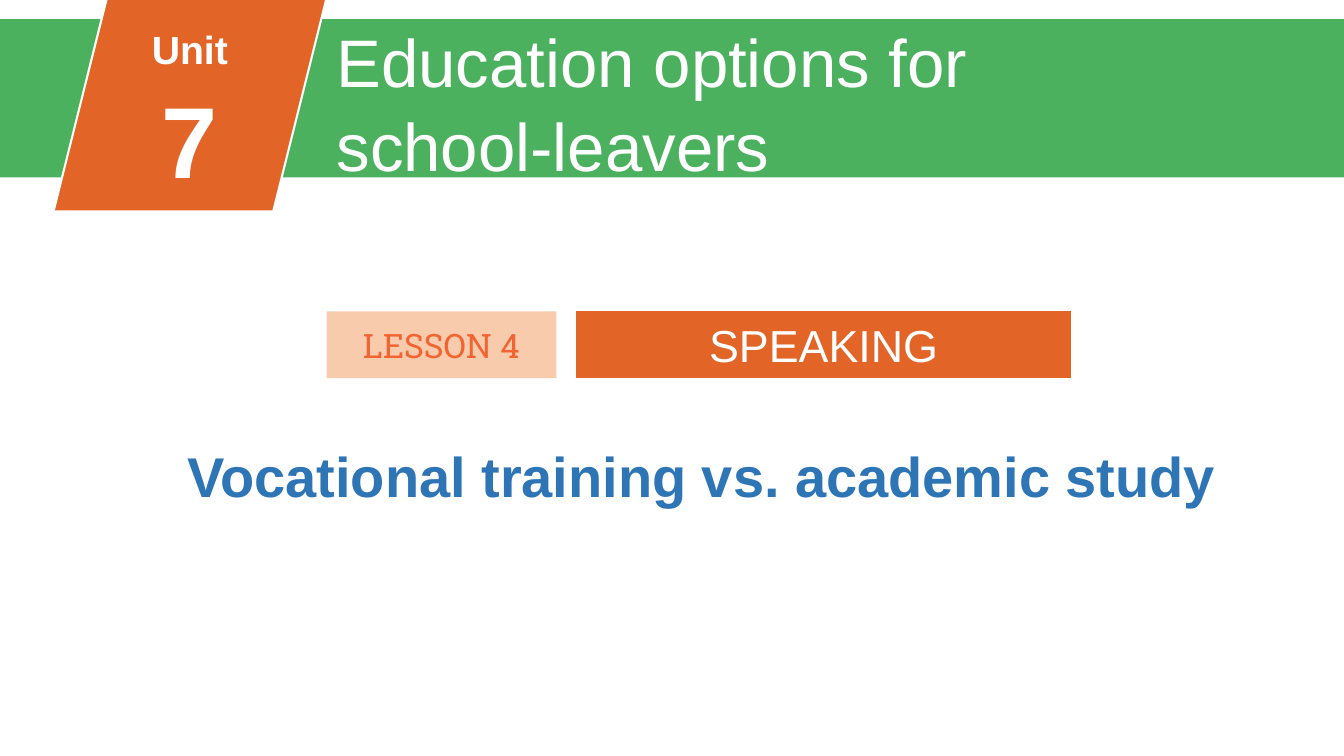
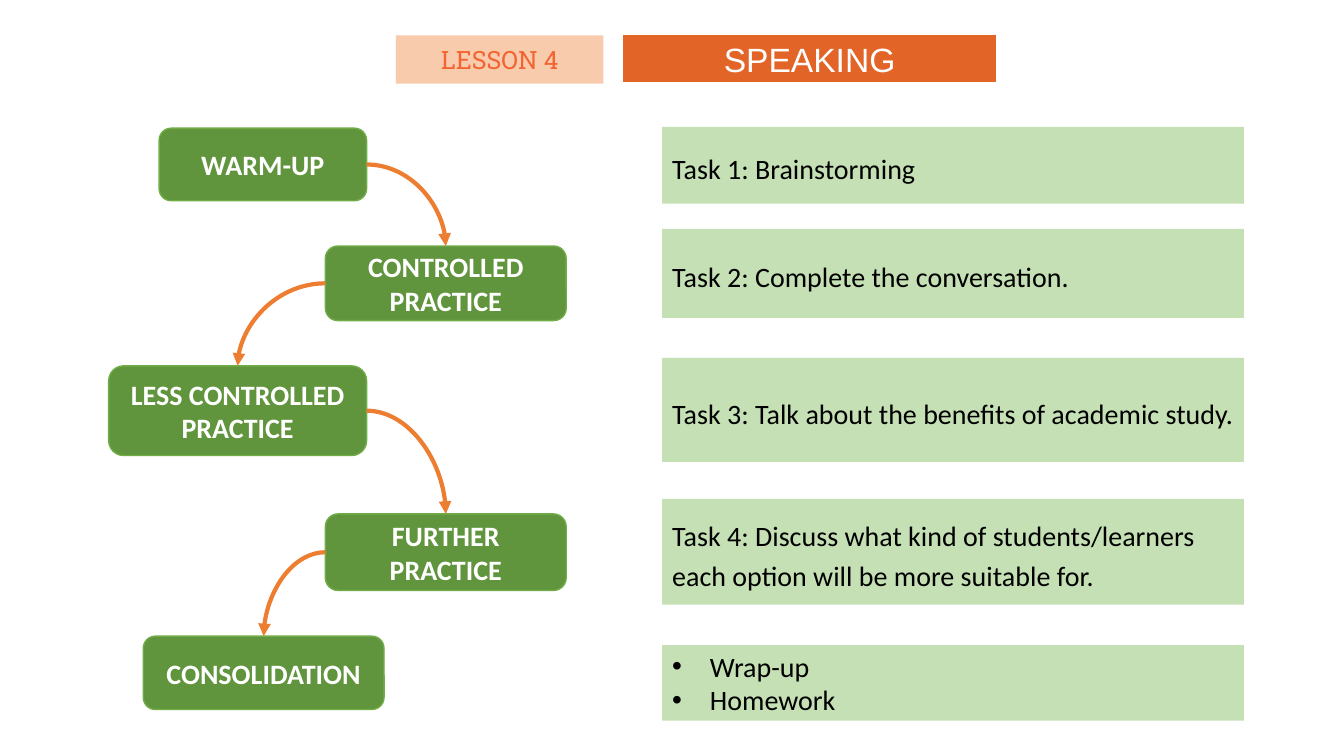
from itertools import pairwise

from lxml import etree
from pptx import Presentation
from pptx.dml.color import RGBColor
from pptx.enum.shapes import MSO_CONNECTOR, MSO_SHAPE
from pptx.enum.text import MSO_ANCHOR, PP_ALIGN
from pptx.oxml.ns import qn
from pptx.util import Cm, Pt

RECT = MSO_SHAPE.RECTANGLE
ROUNDED = MSO_SHAPE.ROUNDED_RECTANGLE
SLANTED = MSO_SHAPE.PARALLELOGRAM
CURVE = MSO_CONNECTOR.CURVE
TOP, MIDDLE = MSO_ANCHOR.TOP, MSO_ANCHOR.MIDDLE
LEFT, CENTER = PP_ALIGN.LEFT, PP_ALIGN.CENTER
LEFT_SITE, RIGHT_SITE, TOP_SITE = 1, 3, 0

COLORS = {
    "white": "FFFFFF",
    "black": "000000",
    "orange": "E36427",
    "peach": "F8CBAD",
    "coral": "F26532",
    "band": "4CB15F",
    "heading": "2E75B6",
    "stage": "61953D",
    "stage_edge": "70AD47",
    "task": "C5E0B4",
    "arrow": "ED7D31",
}
HEADING_FONT, LESSON_FONT, BODY_FONT = "Arial", "Roboto Slab", "Calibri"

SLIDE_WIDTH, SLIDE_HEIGHT = 33.87, 19.05
BULLET_INDENT = 0.95
TASK_LEFT, TASK_WIDTH = 16.69, 14.66

# Label, then left, top, width, height in cm
STAGES = [
    ("WARM-UP", (4.01, 3.23, 5.23, 1.83)),
    ("CONTROLLED PRACTICE", (8.2, 6.2, 6.07, 1.88)),
    ("LESS CONTROLLED PRACTICE", (2.74, 9.22, 6.5, 2.26)),
    ("FURTHER PRACTICE", (8.2, 12.95, 6.07, 1.93)),
    ("CONSOLIDATION", (3.61, 16.03, 6.07, 1.85)),
]
# Text, top, height in cm, extra format
TASKS = [
    ("Task 1: Brainstorming", 3.2, 1.93, {"spacing": 1.2}),
    ("Task 2: Complete the conversation.", 5.77, 2.24, {"spacing": 1.2}),
    ("Task 3: Talk about the benefits of academic study.", 9.02, 2.62, {"spacing": 1.2}),
    ("Task 4: Discuss what kind of students/learners each option will be "
     "more suitable for.", 12.57, 2.67, {"spacing": 1.2}),
    ("Wrap-up\nHomework", 16.26, 1.9, {"bullets": True}),
]


def color(name):
    return RGBColor.from_string(COLORS[name])


def add_bullet(para):
    properties = para._p.get_or_add_pPr()
    properties.set("marL", str(Cm(BULLET_INDENT)))
    properties.set("indent", str(-Cm(BULLET_INDENT)))
    etree.SubElement(properties, qn("a:buFont")).set("typeface", "Arial")
    etree.SubElement(properties, qn("a:buChar")).set("char", "•")


def write_text(box, text, *, sizes, font=HEADING_FONT, ink="white", bold=False,
               align=CENTER, anchor=MIDDLE, spacing=1.0, bullets=False):
    """Write one paragraph per line; the last size serves any further lines."""
    frame = box.text_frame
    frame.word_wrap = True
    frame.vertical_anchor = anchor
    for index, line in enumerate(text.split("\n")):
        para = frame.add_paragraph() if index else frame.paragraphs[0]
        para.alignment = align
        para.line_spacing = spacing
        if bullets:
            add_bullet(para)
        span = para.add_run()
        span.text = line
        span.font.name = font
        span.font.size = Pt(sizes[min(index, len(sizes) - 1)])
        span.font.bold = bold
        span.font.color.rgb = color(ink)


def add_panel(slide, kind, place, fill, edge=None, edge_width=1.5):
    panel = slide.shapes.add_shape(kind, *map(Cm, place))
    panel.shadow.inherit = False
    panel.fill.solid()
    panel.fill.fore_color.rgb = color(fill)
    if edge:
        panel.line.color.rgb = color(edge)
        panel.line.width = Pt(edge_width)
    else:
        panel.line.fill.background()
    return panel


def add_label(slide, place, text, **style):
    box = slide.shapes.add_textbox(*map(Cm, place))
    write_text(box, text, spacing=1.05, **style)


def add_lesson_banner(slide, lesson_place, lesson_size, skill_place, skill_size):
    skill = add_panel(slide, RECT, skill_place, "orange", "white")
    write_text(skill, "SPEAKING", sizes=[skill_size])
    lesson = add_panel(slide, RECT, lesson_place, "peach")
    write_text(lesson, "LESSON 4", sizes=[lesson_size], font=LESSON_FONT, ink="coral")


def add_curved_arrow(slide, start, end):
    """Leave the side of one stage that faces the next, and enter it from above."""
    arrow = slide.shapes.add_connector(CURVE, 0, 0, 0, 0)
    side = RIGHT_SITE if end.left > start.left else LEFT_SITE
    arrow.begin_connect(start, side)
    arrow.end_connect(end, TOP_SITE)
    arrow.line.color.rgb = color("arrow")
    arrow.line.width = Pt(3)
    properties = arrow._element.spPr
    properties.find(qn("a:prstGeom")).set("prst", "curvedConnector2")
    etree.SubElement(properties.find(qn("a:ln")), qn("a:tailEnd")).set("type", "triangle")
    etree.SubElement(properties, qn("a:effectLst"))


def build_cover(slide):
    add_lesson_banner(slide, (8.23, 7.85, 5.79, 1.68), 24, (14.5, 7.8, 12.52, 1.75), 32)
    add_label(slide, (4.47, 10.92, 26.9, 1.96), "Vocational training vs. academic study",
              sizes=[40], ink="heading", bold=True, align=LEFT, anchor=TOP)
    # Unit band
    add_panel(slide, RECT, (0, 0.48, SLIDE_WIDTH, 3.99), "band")
    add_panel(slide, SLANTED, (1.35, -0.05, 6.88, 5.38), "orange", "white")
    add_label(slide, (3.02, 0.53, 3.53, 4.52), "Unit\n7", sizes=[28, 72], bold=True)
    add_label(slide, (8.23, 0.28, 24.92, 4.37), "Education options for\nschool-leavers",
              sizes=[48], align=LEFT, anchor=TOP)


def build_outline(slide):
    add_lesson_banner(slide, (9.98, 0.89, 5.23, 1.22), 18, (15.67, 0.86, 9.47, 1.24), 24)
    # Lesson stages, joined in order
    stages = []
    for name, place in STAGES:
        stage = add_panel(slide, ROUNDED, place, "stage", "stage_edge", 1)
        write_text(stage, name, sizes=[20], font=BODY_FONT, bold=True)
        stages.append(stage)
    for start, end in pairwise(stages):
        add_curved_arrow(slide, start, end)
    # Tasks beside the stages
    for text, top, height, style in TASKS:
        task = add_panel(slide, RECT, (TASK_LEFT, top, TASK_WIDTH, height), "task")
        write_text(task, text, sizes=[20], font=BODY_FONT, ink="black", align=LEFT, **style)


def main():
    deck = Presentation()
    deck.slide_width, deck.slide_height = Cm(SLIDE_WIDTH), Cm(SLIDE_HEIGHT)
    blank = deck.slide_layouts[6]
    for build in (build_cover, build_outline):
        build(deck.slides.add_slide(blank))
    deck.save("out.pptx")


if __name__ == "__main__":
    main()
